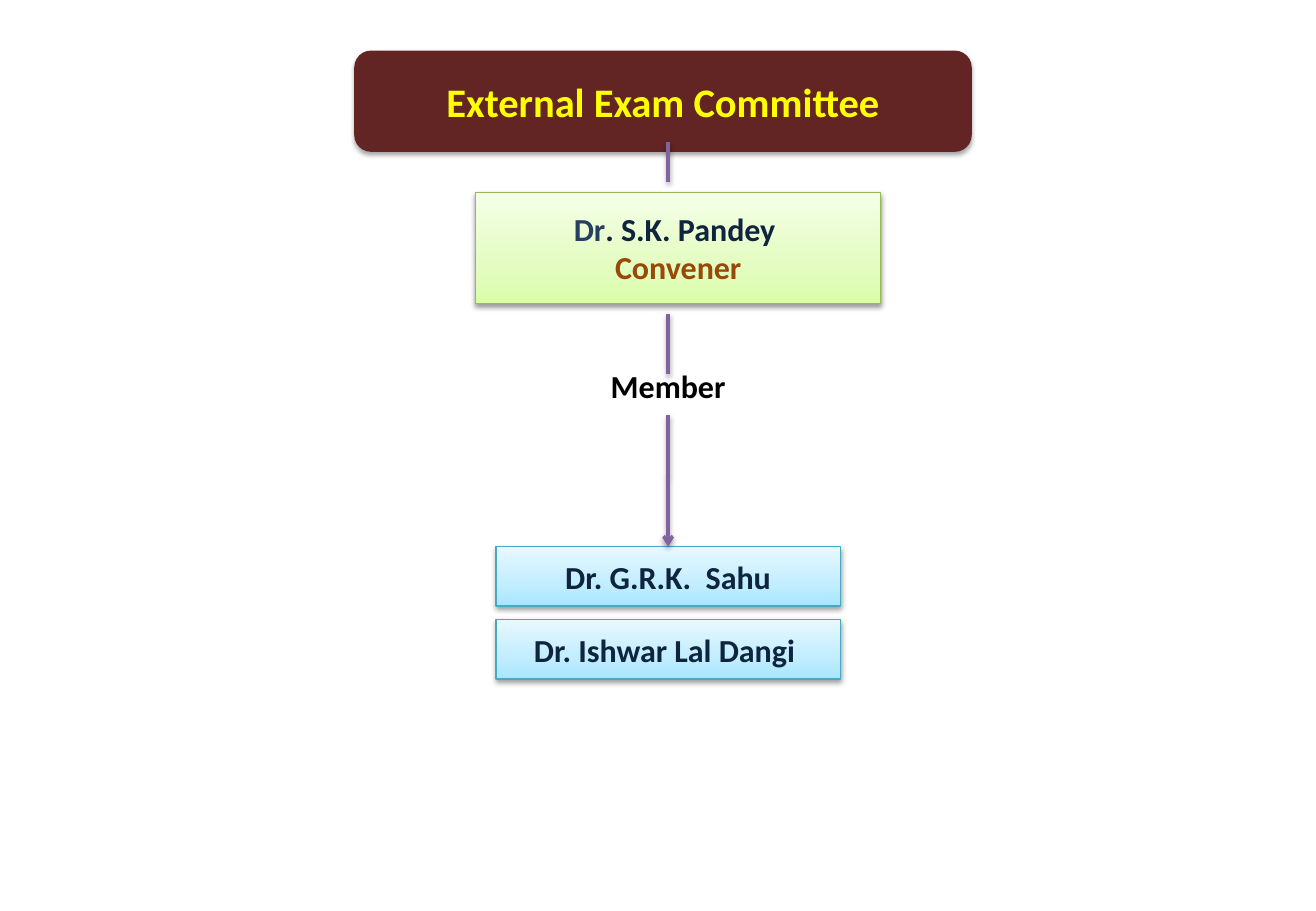
from collections import namedtuple
from copy import deepcopy
from dataclasses import dataclass

from lxml.etree import SubElement
from pptx import Presentation
from pptx.dml.color import RGBColor
from pptx.enum.shapes import MSO_CONNECTOR as Link, MSO_SHAPE as Kind
from pptx.enum.text import MSO_ANCHOR as Anchor, PP_ALIGN as Align
from pptx.oxml.ns import qn
from pptx.util import Pt

Box = namedtuple("Box", "x y w h")


@dataclass(frozen=True)
class Theme:
    font: str = "Calibri"
    head: int = 24
    body: int = 19
    maroon: str = "632523"
    yellow: str = "FFFF00"
    navy: str = "0F243E"
    blue: str = "254061"
    brown: str = "984807"
    black: str = "000000"
    purple: str = "8064A2"
    lime: tuple = ("DAFDA7", "E4FCC2", "F5FFE7")
    moss: str = "98B955"
    sky: tuple = ("A7E6FF", "C1EDFF", "E7F8FF")
    teal: str = "46AAC5"


theme = Theme()


def rgb(code):
    return RGBColor.from_string(code)


def shade(props, alpha=38):
    group = props.find(qn("a:effectLst"))
    if group is None:
        group = SubElement(props, qn("a:effectLst"))
    cast = SubElement(group, qn("a:outerShdw"), blurRad=str(Pt(3.1)),
                      dist=str(Pt(1.7)), dir="5400000", rotWithShape="0")
    tone = SubElement(cast, qn("a:srgbClr"), val=theme.black)
    SubElement(tone, qn("a:alpha"), val=str(alpha * 1000))


def write(shape, *lines, size=theme.body, color=theme.navy, shadow=False):
    frame = shape.text_frame
    frame.word_wrap = True
    frame.vertical_anchor = Anchor.MIDDLE
    frame.margin_left = frame.margin_right = Pt(5)
    frame.margin_top = frame.margin_bottom = Pt(3)
    for i, line in enumerate(lines):
        para = frame.add_paragraph() if i else frame.paragraphs[0]
        para.alignment = Align.CENTER
        for text, tone in [(line, color)] if isinstance(line, str) else line:
            run = para.add_run()
            run.text = text
            font = run.font
            font.size, font.bold = Pt(size), True
            font.color.rgb = rgb(tone)
            if shadow:
                shade(font._element)
            font.name = theme.font


def panel(slide, box, fill, edge=None, kind=Kind.RECTANGLE, alpha=38):
    shape = slide.shapes.add_shape(kind, *map(Pt, box))
    if isinstance(fill, str):
        shape.fill.solid()
        shape.fill.fore_color.rgb = rgb(fill)
    else:
        shape.fill.gradient()
        shape.fill.gradient_angle = 90
        first = shape._element.spPr.find(".//" + qn("a:gs"))
        first.addnext(deepcopy(first))
        for stop, place, tone in zip(shape.fill.gradient_stops, (0, 0.35, 1), fill):
            stop.position = place
            stop.color.rgb = rgb(tone)
    if edge:
        shape.line.color.rgb = rgb(edge)
        shape.line.width = Pt(0.75)
    else:
        shape.line.fill.background()
    shape.shadow.inherit = False
    shade(shape._element.spPr, alpha)
    return shape


def stem(slide, x, top, end, goal=None):
    line = slide.shapes.add_connector(Link.STRAIGHT, Pt(x), Pt(top), Pt(x), Pt(end))
    line.line.color.rgb = rgb(theme.purple)
    line.line.width = Pt(2)
    if goal is not None:
        line.end_connect(goal, 0)
        SubElement(line.line._get_or_add_ln(), qn("a:tailEnd"), type="arrow")
    shade(line._element.spPr)


def title(slide, box):
    shape = panel(slide, box, theme.maroon, kind=Kind.ROUNDED_RECTANGLE, alpha=35)
    write(shape, "External Exam Committee", size=theme.head, color=theme.yellow)


def leader(slide, box):
    shape = panel(slide, box, theme.lime, theme.moss)
    write(shape, [("Dr", theme.blue), (". S.K. Pandey ", theme.navy)],
          [("Convener", theme.brown)])


def label(slide, box):
    shape = slide.shapes.add_textbox(*map(Pt, box))
    write(shape, "Member", color=theme.black, shadow=True)


def members(slide, box, names, gap=8):
    high = (box.h - gap * (len(names) - 1)) / len(names)
    cards = []
    for i, name in enumerate(names):
        spot = Box(box.x, box.y + i * (high + gap), box.w, high)
        card = panel(slide, spot, theme.sky, theme.teal)
        write(card, name)
        cards.append(card)
    return cards


def chart(slide, box):
    def part(x, y, w, h):
        return Box(box.x + x, box.y + y, w, h)

    title(slide, part(0, 0, box.w, 60))
    leader(slide, part(72, 84, 240, 66))
    cards = members(slide, part(84, 294, 204, 78.5),
                    ("Dr. G.R.K.  Sahu", "Dr. Ishwar Lal Dangi "))
    label(slide, part(96, 181, 180, 35))
    mid = box.x + 186
    for top, end, goal in ((54, 78, None), (156, 192, None),
                           (216, 252, None), (252, 294, cards[0])):
        stem(slide, mid, box.y + top, box.y + end, goal)


def main():
    deck = Presentation()
    deck.slide_width, deck.slide_height = Pt(780), Pt(540)
    slide = deck.slides.add_slide(deck.slide_layouts[6])
    chart(slide, Box(210, 30, 366, 372))
    deck.save("out.pptx")


if __name__ == "__main__":
    main()
